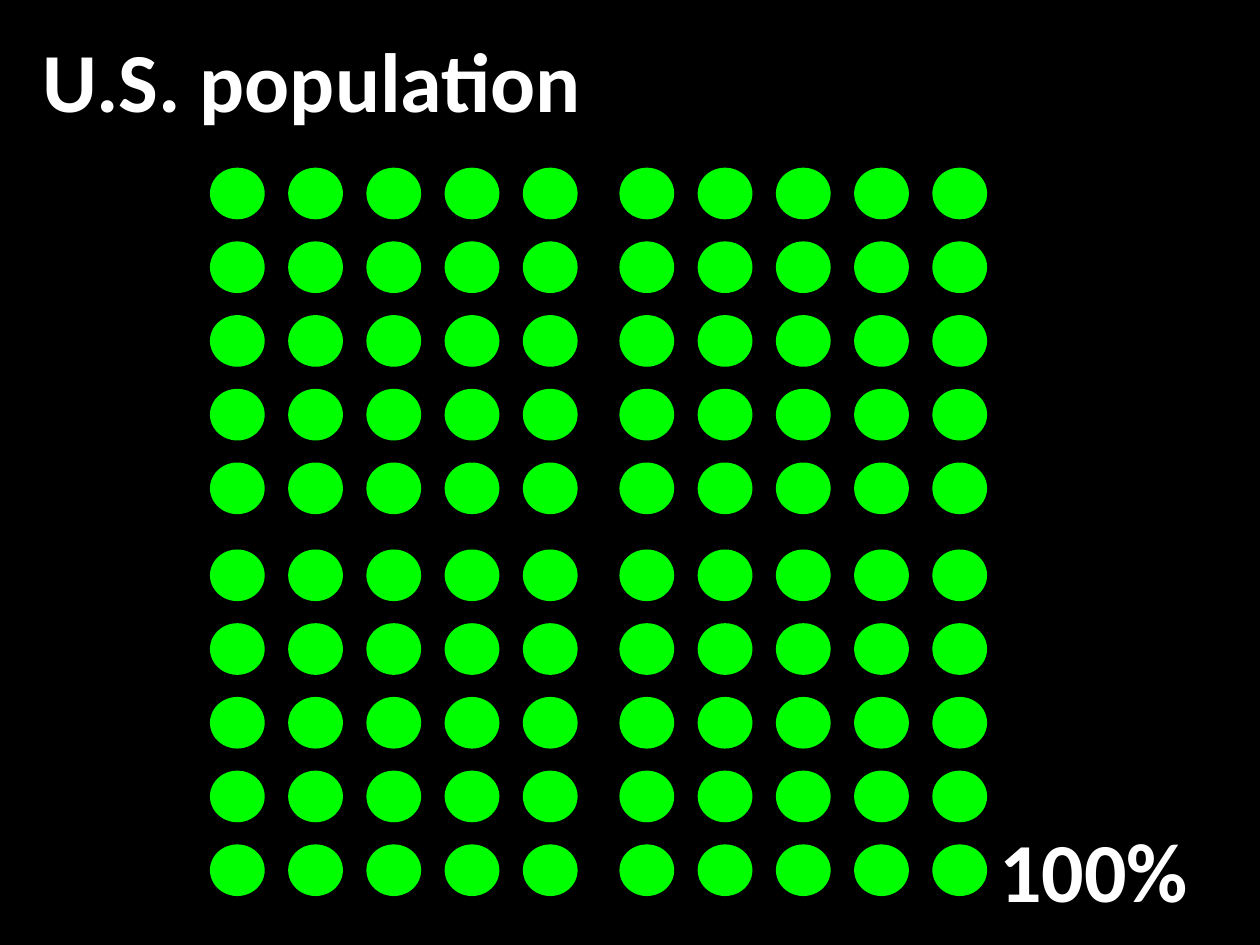
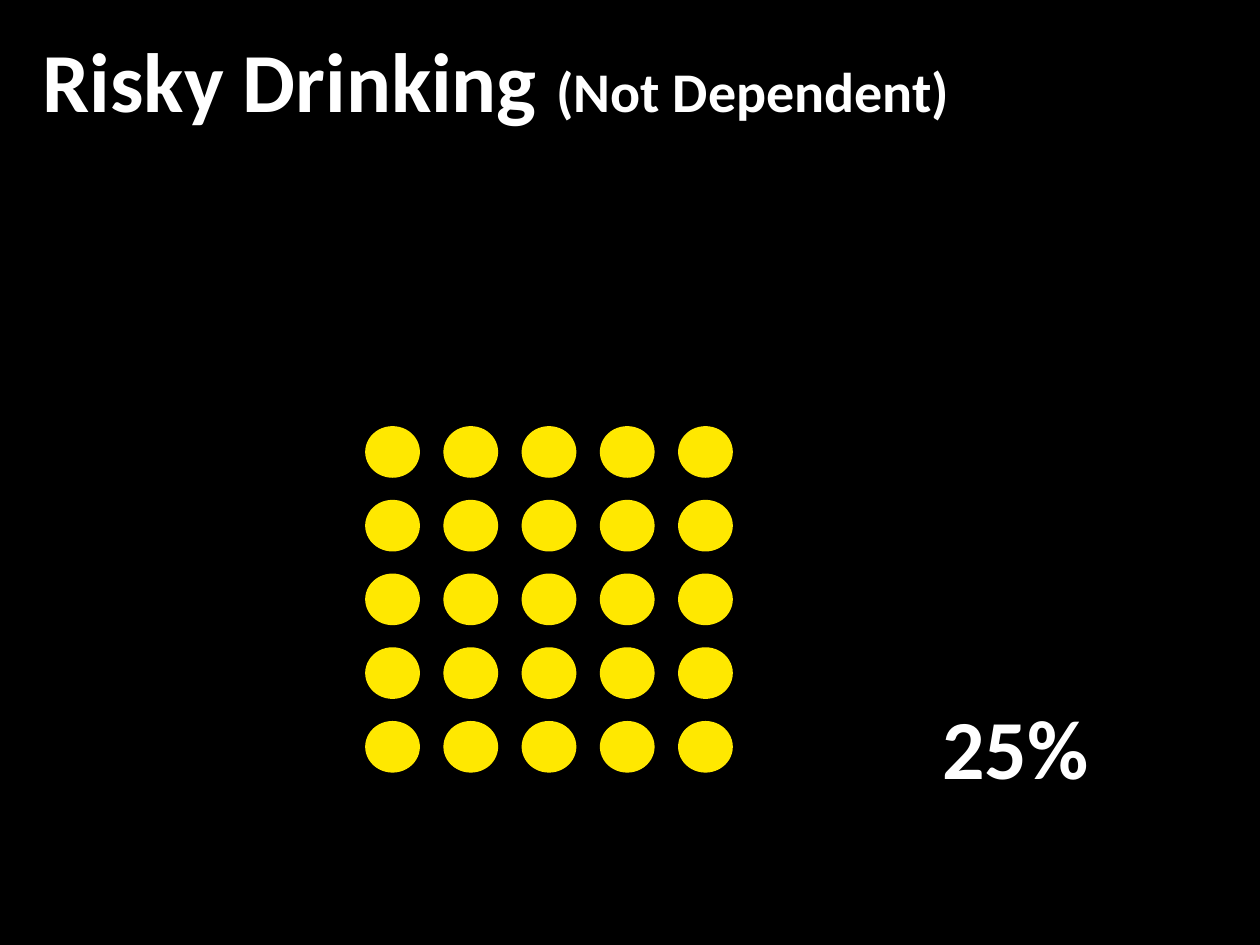
from dataclasses import dataclass
from itertools import product
from pptx import Presentation
from pptx.dml.color import RGBColor
from pptx.enum.shapes import MSO_SHAPE
from pptx.enum.text import MSO_AUTO_SIZE
from pptx.util import Pt


@dataclass(frozen=True)
class Theme:
    """Colours, font and type sizes of the deck."""
    back: str = "000000"
    ink: str = "FFFFFF"
    green: str = "00FF00"
    gold: str = "FFE800"
    font: str = "Calibri"
    big: int = 48
    small: int = 32


@dataclass(frozen=True)
class Box:
    """A frame in points."""
    left: float
    top: float
    wide: float
    high: float

    def place(self):
        """Return the frame as lengths."""
        return [Pt(v) for v in (self.left, self.top, self.wide, self.high)]


THEME = Theme()
SIDE = 5
DOT = (31.3, 29.5)
BLOCK = (210.1, 198)


def paint(fill, tone):
    """Give a fill one solid colour."""
    fill.solid()
    fill.fore_color.rgb = RGBColor.from_string(tone)


def apply(target, form):
    """Set each attribute in a dict of format values."""
    for name, value in form.items():
        setattr(target, name, value)


def label(slide, box, parts, wrap=True):
    """Write bold text made of (words, size) parts."""
    frame = slide.shapes.add_textbox(*box.place()).text_frame
    apply(frame, {"word_wrap": wrap, "auto_size": MSO_AUTO_SIZE.SHAPE_TO_FIT_TEXT})
    for words, size in parts:
        run = frame.paragraphs[0].add_run()
        run.text = words
        apply(run.font, {"name": THEME.font, "size": Pt(size), "bold": True})
        run.font.color.rgb = RGBColor.from_string(THEME.ink)


def block(slide, box, tone):
    """Fill a box with a square grid of dots."""
    wide, high = DOT
    across = (box.wide - wide) / (SIDE - 1)
    down = (box.high - high) / (SIDE - 1)
    for row, col in product(range(SIDE), repeat=2):
        spot = Box(box.left + col * across, box.top + row * down, wide, high)
        dot = slide.shapes.add_shape(MSO_SHAPE.OVAL, *spot.place())
        dot.shadow.inherit = False
        paint(dot.fill, tone)
        dot.line.fill.background()


def panel(deck, title, share, spots, tone):
    """Add a slide with a title, dot blocks and a share label."""
    slide = deck.slides.add_slide(deck.slide_layouts[6])
    words, wide = title
    label(slide, Box(17.3, 13, wide, 65), words, wrap=False)
    for left, top in spots:
        block(slide, Box(left, top, *BLOCK), tone)
    text, left, top = share
    label(slide, Box(left, top, 156.2, 65), [(text, THEME.big)])


def main():
    """Build and save the deck."""
    deck = Presentation()
    apply(deck, {"slide_width": Pt(720), "slide_height": Pt(540)})
    paint(deck.slide_master.background.fill, THEME.back)
    panel(deck, ([("U.S. population", THEME.big)], 323.3),
          ("100%", 563.8, 464.4), product((120, 354), (95.8, 314)), THEME.green)
    panel(deck, ([("Risky Drinking ", THEME.big), ("(Not Dependent)", THEME.small)], 542.9),
          ("25%", 531.4, 393.8), [(208.7, 243.5)], THEME.gold)
    deck.save("out.pptx")


if __name__ == "__main__":
    main()
